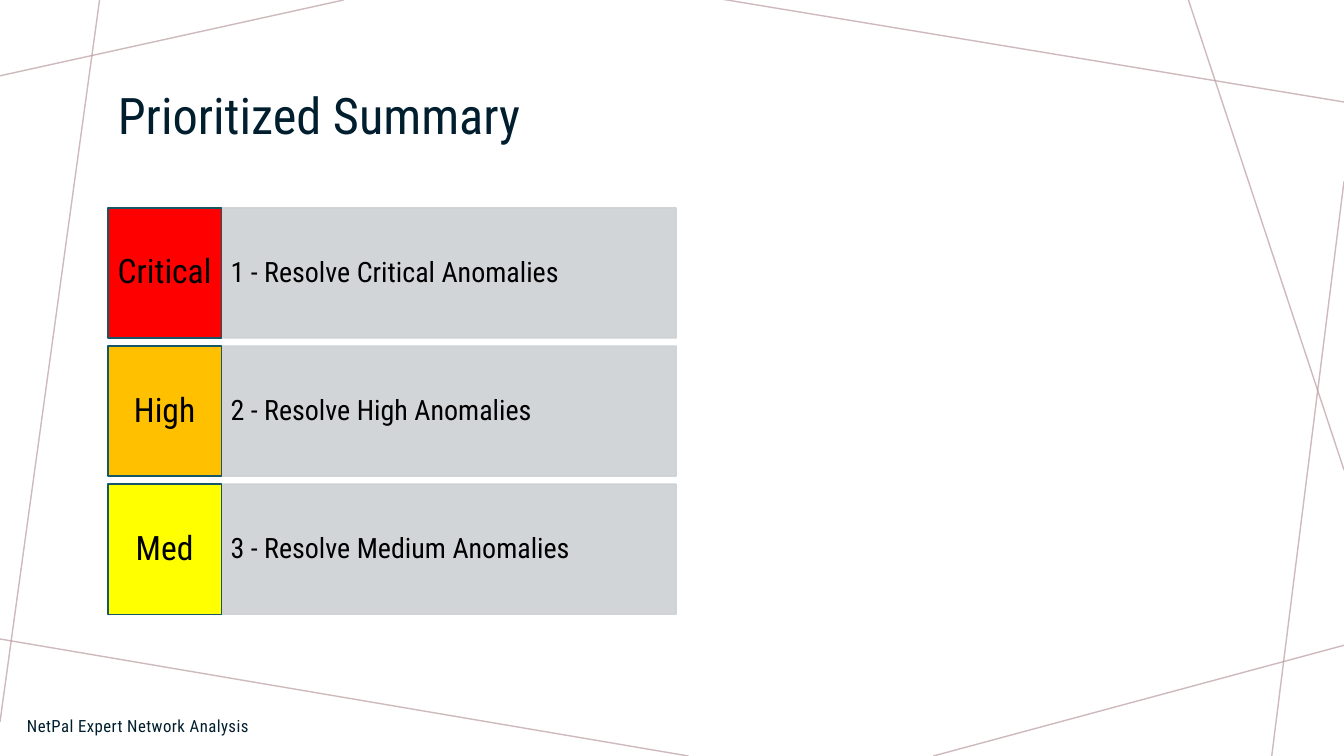
from dataclasses import dataclass

from lxml.etree import SubElement
from pptx import Presentation
from pptx.dml.color import RGBColor
from pptx.enum.shapes import MSO_CONNECTOR, MSO_SHAPE
from pptx.enum.text import MSO_ANCHOR as Anchor, PP_ALIGN as Align
from pptx.oxml.ns import qn
from pptx.util import Cm, Pt


@dataclass(frozen=True)
class Theme:
    font: str = "Roboto Condensed"
    ink: str = "001E2E"
    black: str = "000000"
    panel: str = "CCD1D3"
    badge_border: str = "155767"
    web: str = "BA9CA0"
    critical: str = "FF0000"
    high: str = "FFC000"
    medium: str = "FFFF00"
    title_size: int = 36
    badge_size: int = 24
    action_size: int = 20
    footer_size: int = 12


THEME = Theme()
WIDTH, HEIGHT = 33.87, 19.05

# Each web line runs from (x, y) to (x, y), in centimetres.
WEB_LINES = [
    (8.66, 0, 0, 1.91),
    (2.51, 0, 0, 18.19),
    (17.35, HEIGHT, -0.13, 16.08),
    (WIDTH, 16.26, 23.52, HEIGHT),
    (WIDTH, 4.57, 32.05, HEIGHT),
    (WIDTH, 11.84, 29.95, 0),
    (WIDTH, 2.57, 18.14, -0.03),
]

PRIORITIES = [
    ("Critical", THEME.critical, "1 - Resolve Critical Anomalies"),
    ("High", THEME.high, "2 - Resolve High Anomalies"),
    ("Med", THEME.medium, "3 - Resolve Medium Anomalies"),
]


def set_colour(fill, colour, opacity=100):
    fill.solid()
    fill.fore_color.rgb = RGBColor.from_string(colour)
    if opacity < 100:
        # The fill's parent holds one solidFill with one srgbClr.
        for element in fill._xPr.findall(qn("a:solidFill") + "/" + qn("a:srgbClr")):
            SubElement(element, qn("a:alpha"), val=str(opacity * 1000))


def write_text(shape, text, size, colour, align=Align.LEFT, line_spacing=None,
               side_inset=0.25, tracking=None):
    """Put one vertically centred paragraph in the shape."""
    frame = shape.text_frame
    frame.text = text
    frame.word_wrap = True
    frame.vertical_anchor = Anchor.MIDDLE
    frame.margin_left = frame.margin_right = Cm(side_inset)
    paragraph = frame.paragraphs[0]
    paragraph.alignment = align
    paragraph.line_spacing = line_spacing
    font = paragraph.runs[0].font
    font.name = THEME.font
    font.size = Pt(size)
    font.color.rgb = RGBColor.from_string(colour)
    if tracking:
        paragraph.runs[0]._r.get_or_add_rPr().set("spc", str(round(tracking * 100)))


def add_web(slide):
    """Draw the thin crossing lines around the slide's edges."""
    for ends in WEB_LINES:
        line = slide.shapes.add_connector(
            MSO_CONNECTOR.STRAIGHT, *(Cm(value) for value in ends))
        line.line.width = Pt(1)
        set_colour(line.line.fill, THEME.web, 70)
        SubElement(line._element.spPr, qn("a:effectLst"))


def add_label(slide, box, text, size, **options):
    label = slide.shapes.add_textbox(*(Cm(value) for value in box))
    write_text(label, text, size, THEME.ink, **options)


def add_block(slide, box, fill, border, opacity=100):
    block = slide.shapes.add_shape(
        MSO_SHAPE.RECTANGLE, *(Cm(value) for value in box))
    block.shadow.inherit = False
    set_colour(block.fill, fill, opacity)
    block.line.width = Pt(1)
    set_colour(block.line.fill, border, opacity)
    return block


def add_priorities(slide, box, badge_width=2.86, gap=0.2):
    """Stack one badge and action per priority, evenly down the box."""
    left, top, width, height = box
    row_height = (height - gap * (len(PRIORITIES) - 1)) / len(PRIORITIES)
    for index, (level, colour, action) in enumerate(PRIORITIES):
        row_top = top + index * (row_height + gap)
        panel = add_block(
            slide, (left + badge_width, row_top, width - badge_width, row_height),
            THEME.panel, THEME.panel, 90)
        write_text(panel, action, THEME.action_size, THEME.black,
                   line_spacing=0.9, side_inset=0.23)
        badge = add_block(slide, (left, row_top, badge_width, row_height),
                          colour, THEME.badge_border)
        write_text(badge, level, THEME.badge_size, THEME.black, Align.CENTER,
                   line_spacing=0.9, side_inset=0.15)


def main():
    presentation = Presentation()
    presentation.slide_width = Cm(WIDTH)
    presentation.slide_height = Cm(HEIGHT)
    slide = presentation.slides.add_slide(presentation.slide_layouts[6])
    add_web(slide)
    add_label(slide, (2.72, 1.14, 29.03, 3.68), "Prioritized Summary",
              THEME.title_size, line_spacing=0.9)
    add_priorities(slide, (2.72, 5.24, 14.32, 10.24))
    add_label(slide, (0.43, 17.78, 12.5, 1.02), "NetPal Expert Network Analysis",
              THEME.footer_size, tracking=0.3)
    presentation.save("out.pptx")


if __name__ == "__main__":
    main()
